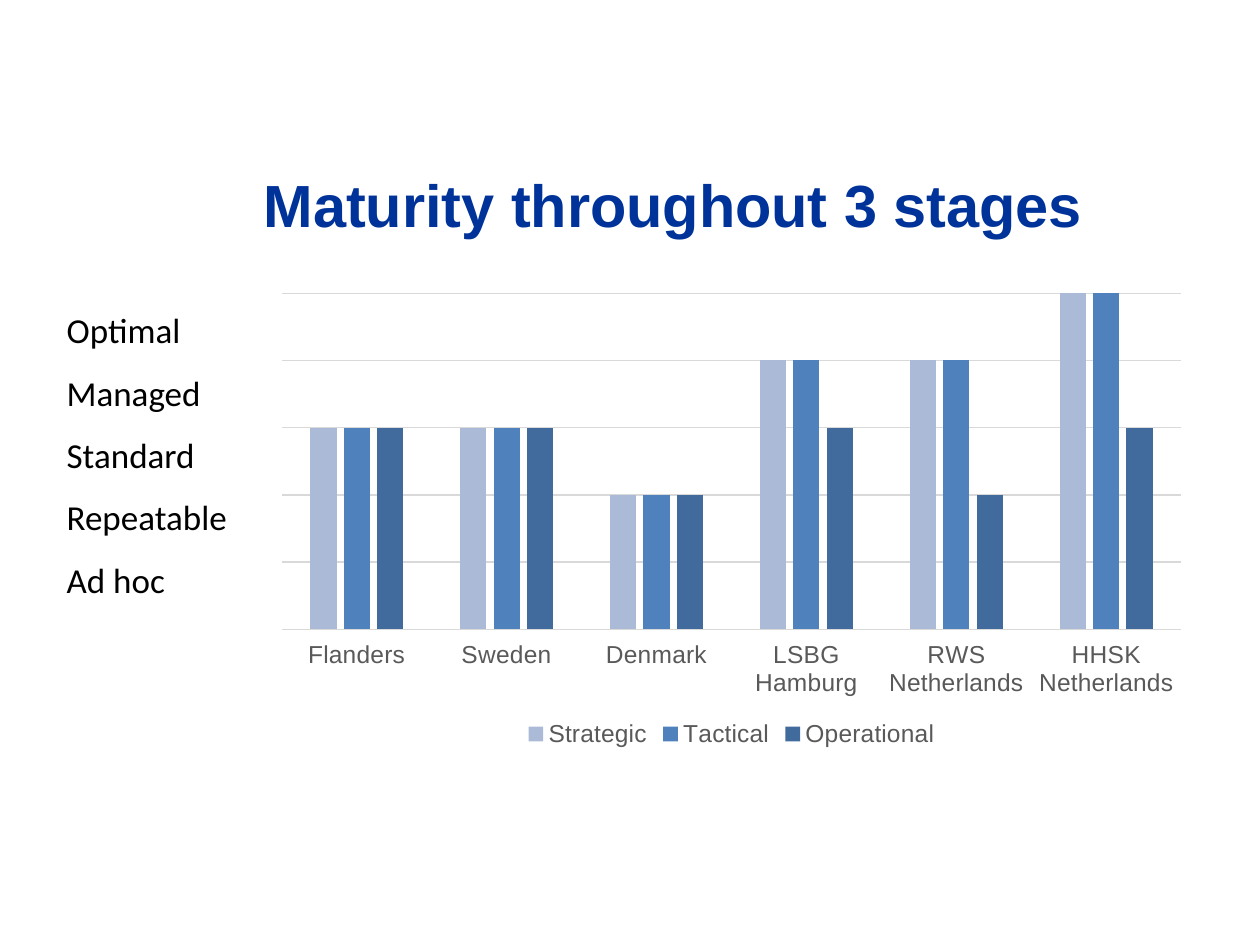
from lxml.etree import SubElement as Sub
from pptx import Presentation as Deck
from pptx.chart.data import CategoryChartData as Data
from pptx.dml.color import RGBColor as Rgb
from pptx.enum.chart import XL_CHART_TYPE as Kind, XL_LEGEND_POSITION as Side
from pptx.enum.chart import XL_TICK_LABEL_POSITION as Spot, XL_TICK_MARK as Tick
from pptx.enum.text import MSO_ANCHOR as Anchor, PP_ALIGN as Align
from pptx.oxml.ns import qn
from pptx.util import Pt

SCALE = 914400 / 126


def px(*nums):
    return [round(n * SCALE) for n in nums]


def hue(code):
    return Rgb.from_string(code)


def style(font, name, size, color, bold=False):
    font.name, font.size, font.bold = name, Pt(size), bold
    font.color.rgb = hue(color)


class Page:
    """Holds the slide and its style, and draws each kind of element."""

    head, body = "Arial", "Calibri"
    navy, black, gray, rule, white = "003399", "000000", "595959", "D9D9D9", "FFFFFF"

    def __init__(self, deck):
        self.slide = deck.slides.add_slide(deck.slide_layouts[6])
        self.items = self.slide.shapes

    def text(self, para, words, *look):
        run = para.add_run()
        run.text = words
        style(run.font, *look)

    def title(self, words, box):
        frame = self.items.add_textbox(*px(*box)).text_frame
        frame.word_wrap = True
        frame.vertical_anchor = Anchor.TOP
        edges = px(0, 12, 13, 6)
        (frame.margin_left, frame.margin_top,
         frame.margin_right, frame.margin_bottom) = edges
        para = frame.paragraphs[0]
        para.alignment = Align.CENTER
        self.text(para, words, self.head, 34, self.navy, True)

    def line(self, form):
        form.line.color.rgb = hue(self.rule)
        form.line.width = Pt(0.75)

    def chart(self, cats, sets, box):
        data = Data()
        data.categories = cats
        for name, vals, _ in sets:
            data.add_series(name, vals)
        chart = self.items.add_chart(Kind.COLUMN_CLUSTERED, *px(*box), data).chart
        style(chart.font, self.body, 10, self.black)
        chart.has_title = False
        plot = chart.plots[0]
        plot.gap_width, plot.overlap, plot.vary_by_categories = 219, -27, False
        for bar, (_, _, color) in zip(plot.series, sets):
            bar.format.fill.solid()
            bar.format.fill.fore_color.rgb = hue(color)
            bar.invert_if_negative = False
        base = chart.category_axis
        base.major_tick_mark = base.minor_tick_mark = Tick.NONE
        base.tick_label_position = Spot.LOW
        style(base.tick_labels.font, self.head, 14, self.gray)
        self.line(base.format)
        scale = chart.value_axis
        scale.visible = False
        scale.minimum_scale, scale.maximum_scale, scale.major_unit = 0, 100, 20
        scale.has_major_gridlines = True
        self.line(scale.major_gridlines.format)
        chart.has_legend = True
        chart.legend.position = Side.BOTTOM
        chart.legend.include_in_layout = False
        style(chart.legend.font, self.head, 14, self.gray)

    def border(self, cell, widths):
        props = cell._tc.get_or_add_tcPr()
        for side, width in zip("LRTB", widths):
            edge = Sub(props, qn(f"a:ln{side}"), w=str(Pt(width)))
            fill = Sub(edge, qn("a:solidFill"))
            Sub(fill, qn("a:srgbClr"), val=self.white)

    def table(self, words, box):
        table = self.items.add_table(len(words), 1, *px(*box)).table
        table.first_row = table.horz_banding = False
        for row, word in enumerate(words):
            cell = table.cell(row, 0)
            self.border(cell, (1, 1, 3 if row == 1 else 1, 3 if row == 0 else 1))
            cell.fill.background()
            cell.vertical_anchor = Anchor.TOP
            para = cell.text_frame.paragraphs[0]
            self.text(para, word, self.body, 20, self.black)


def main():
    deck = Deck()
    deck.slide_width, deck.slide_height = px(1260, 945)
    page = Page(deck)
    cats = ["Flanders", "Sweden", "Denmark", "LSBG Hamburg",
            "RWS Netherlands", "HHSK Netherlands"]
    high = (60, 60, 40, 80, 80, 100)
    sets = [("Strategic", high, "AABAD7"),
            ("Tactical", high, "4F81BD"),
            ("Operational", (60, 60, 40, 60, 40, 60), "426B9D")]
    page.chart(cats, sets, (263, 284, 937, 469))
    page.title("Maturity throughout 3 stages", (142, 156, 1075, 66))
    levels = ["Optimal", "Managed", "Standard", "Repeatable", "Ad hoc"]
    page.table(levels, (54, 304, 227, 312))
    deck.save("out.pptx")


if __name__ == "__main__":
    main()
